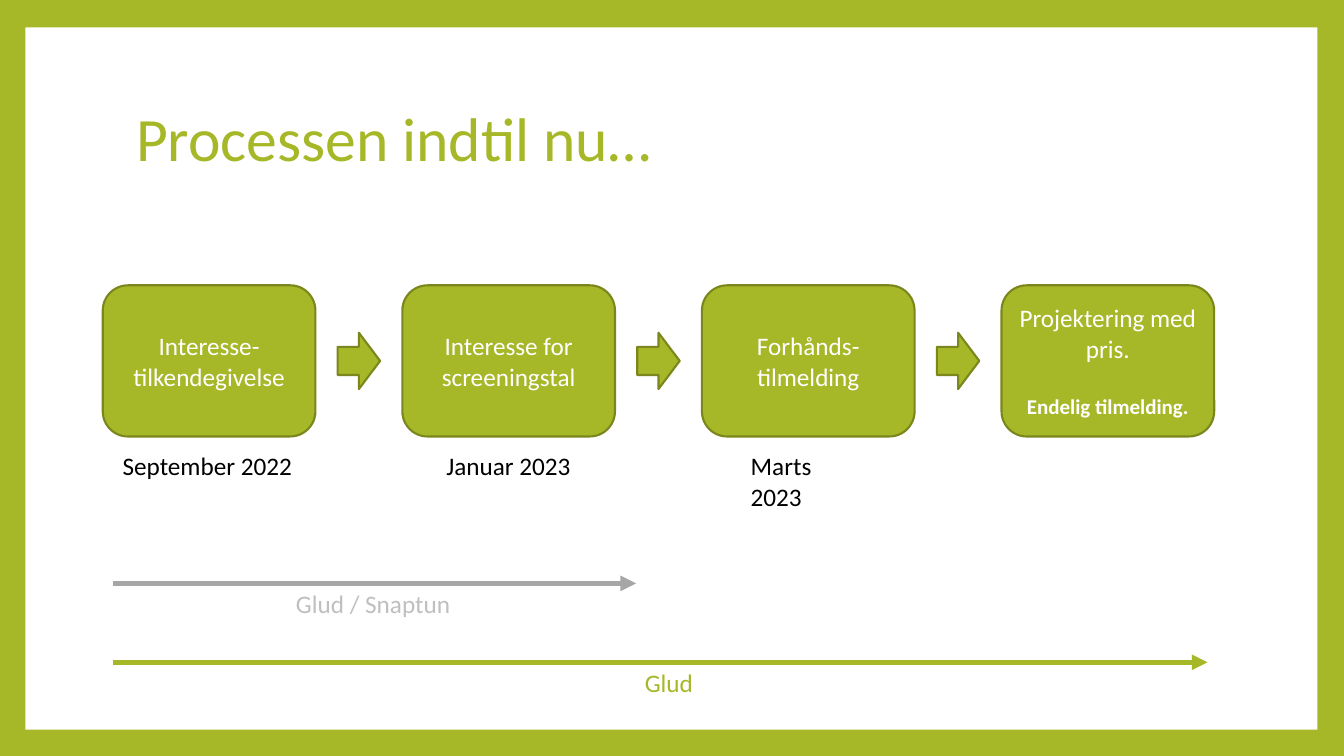
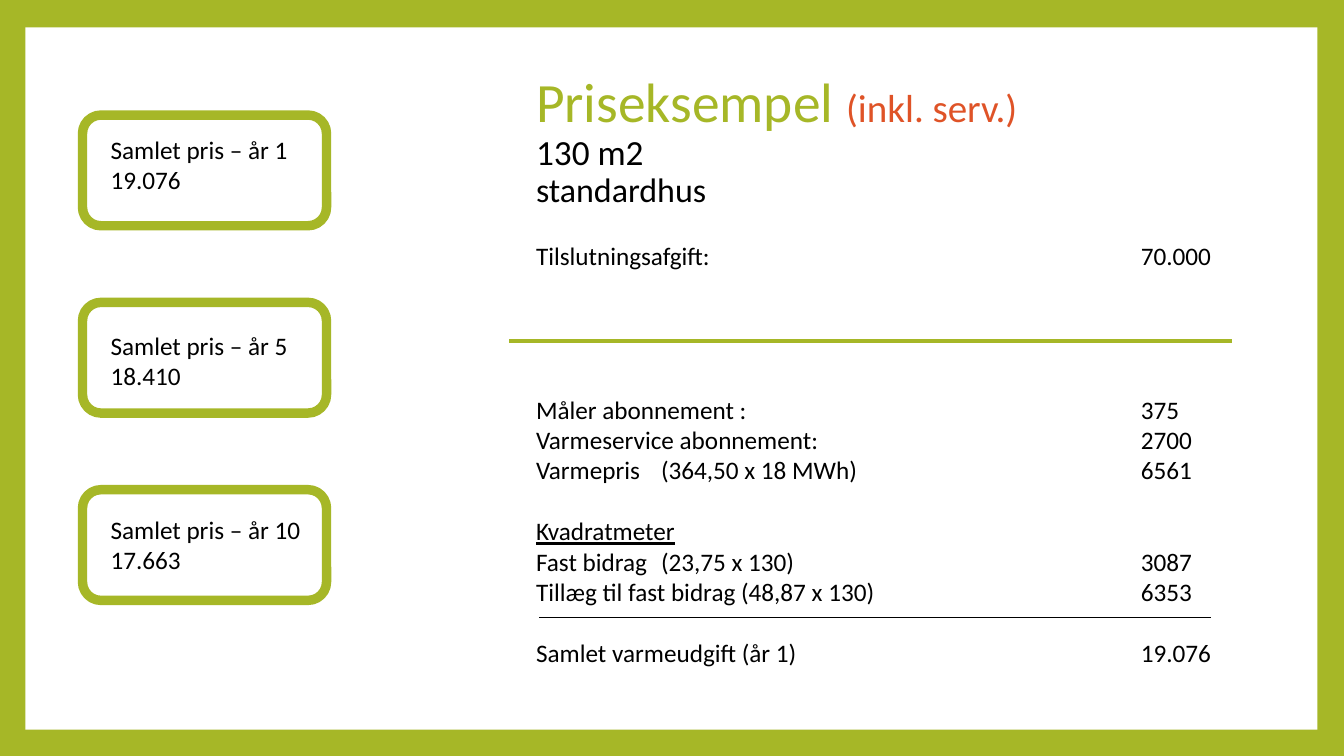
"""Build two Danish slides on the district heating process and a price example."""
from lxml import etree
from pptx import Presentation
from pptx.dml.color import RGBColor as RGB
from pptx.enum.shapes import MSO_CONNECTOR as CONN, MSO_SHAPE as SHAPE
from pptx.enum.text import MSO_ANCHOR as ANCHOR, PP_ALIGN as ALIGN
from pptx.oxml.ns import qn
from pptx.util import Cm, Pt

COLORS = {
    "green": "A6B727", "olive": "7B871D", "orange": "DF5327", "white": "FFFFFF",
    "black": "000000", "gray": "A6A6A6", "silver": "BFBFBF",
}
FONT = "Calibri"
SIZE = 18
BLANK_LINE = 22


def rgb(name):
    return RGB.from_string(COLORS[name])


def add_run(p, text, size=SIZE, color="black", bold=False, underline=False):
    r = p.add_run()
    r.text = text
    f = r.font
    f.name, f.size, f.bold, f.underline = FONT, Pt(size), bold, underline
    f.color.rgb = rgb(color)


def add_lines(p, lines, **style):
    for i, line in enumerate(lines):
        if i:
            p.add_line_break()
        add_run(p, line, **style)


def add_text(slide, x, y, w, h, anchor=ANCHOR.TOP):
    tf = slide.shapes.add_textbox(Cm(x), Cm(y), Cm(w), Cm(h)).text_frame
    tf.word_wrap = True
    tf.vertical_anchor = anchor
    return tf


def add_label(slide, x, y, w, lines, color="black"):
    tf = add_text(slide, x, y, w, 1.02)
    add_lines(tf.paragraphs[0], lines, color=color)


def add_title(slide, x, w):
    p = add_text(slide, x, 1.7, w, 3.76, ANCHOR.MIDDLE).paragraphs[0]
    p.line_spacing = 0.9
    return p


def add_box(slide, kind, x, y, w, h, fill=None, line=None, width=1.5):
    sp = slide.shapes.add_shape(kind, Cm(x), Cm(y), Cm(w), Cm(h))
    sp.shadow.inherit = False
    if fill:
        sp.fill.solid()
        sp.fill.fore_color.rgb = rgb(fill)
    else:
        sp.fill.background()
    if line:
        sp.line.color.rgb = rgb(line)
        sp.line.width = Pt(width)
    else:
        sp.line.fill.background()
    return sp


def add_rule(slide, x1, x2, y, color, width, arrow=False):
    c = slide.shapes.add_connector(CONN.STRAIGHT, Cm(x1), Cm(y), Cm(x2), Cm(y))
    c.line.color.rgb = rgb(color)
    c.line.width = Pt(width)
    if arrow:
        etree.SubElement(c.line._get_or_add_ln(), qn("a:tailEnd"), type="triangle")
    etree.SubElement(c._element.spPr, qn("a:effectLst"))


def add_step(slide, x, y, w, h, lines, note=None):
    sp = add_box(slide, SHAPE.ROUNDED_RECTANGLE, x, y, w, h, "green", "olive")
    tf = sp.text_frame
    tf.word_wrap = True
    tf.vertical_anchor = ANCHOR.MIDDLE
    p = tf.paragraphs[0]
    p.alignment = ALIGN.CENTER
    add_lines(p, lines, color="white")
    if note:
        p = tf.add_paragraph()
        p.alignment = ALIGN.CENTER
        p.space_before = Pt(BLANK_LINE)
        add_run(p, note, 15, "white", bold=True)


def add_total(slide, y, inset, lines):
    sp = add_box(slide, SHAPE.ROUNDED_RECTANGLE, 2.08, y, 6.15, 2.79,
                 line="green", width=6.75)
    tf = sp.text_frame
    tf.word_wrap = True
    tf.vertical_anchor = ANCHOR.TOP
    tf.margin_left, tf.margin_right = Cm(0.57), Cm(0)
    tf.margin_top = Cm(inset)
    p = tf.paragraphs[0]
    p.alignment = ALIGN.LEFT
    add_lines(p, lines)


def add_price_list(slide, rows):
    tf = add_text(slide, 13.26, 5.94, 18.59, 11.79)
    for i, (blanks, text, underline) in enumerate(rows):
        p = tf.add_paragraph() if i else tf.paragraphs[0]
        if blanks:
            p.space_before = Pt(blanks * BLANK_LINE)
        tabs = etree.SubElement(p._p.get_or_add_pPr(), qn("a:tabLst"))
        for pos in (3.15, 15.24):
            etree.SubElement(tabs, qn("a:tab"), pos=str(Cm(pos)), algn="l")
        add_run(p, text, underline=underline)


def add_slide(prs):
    slide = prs.slides.add_slide(prs.slide_layouts[6])
    add_box(slide, SHAPE.RECTANGLE, 0.64, 0.69, 32.56, 17.7, "white")
    return slide


def build_process(prs):
    slide = add_slide(prs)
    add_run(add_title(slide, 3.18, 27.43), "Processen indtil nu…", 44, "green")
    left, top, w, h, pitch = 2.59, 7.19, 5.36, 3.81, 7.55
    arrow_w, arrow_h = 1.07, 1.42
    steps = [
        (["Interesse-tilkendegivelse"], None),
        (["Interesse for", "screeningstal"], None),
        (["Forhånds-tilmelding"], None),
        (["Projektering med pris."], "Endelig tilmelding."),
    ]
    for i, (lines, note) in enumerate(steps):
        x = left + i * pitch
        add_step(slide, x, top, w, h, lines, note)
        if i:
            add_box(slide, SHAPE.RIGHT_ARROW, x - (pitch - w + arrow_w) / 2,
                    top + (h - arrow_h) / 2, arrow_w, arrow_h, "green", "olive")
    for x, lines in [(2.84, ["September 2022"]), (11, ["Januar 2023"]),
                     (18.67, ["Marts", "2023"])]:
        add_label(slide, x, 11.23, 5.2, lines)
    for end, y, line, text_x, text, color in [
            (16.03, 14.7, "gray", 7.21, "Glud / Snaptun", "silver"),
            (30.43, 16.69, "green", 16, "Glud", "green")]:
        add_rule(slide, 2.84, end, y, line, 3.75, arrow=True)
        add_label(slide, text_x, y, 5.2, [text], color)


def build_price(prs):
    slide = add_slide(prs)
    p = add_title(slide, 13.26, 18.59)
    add_run(p, "Priseksempel ", 39.6, "green")
    add_run(p, "(inkl. serv.)", 27.9, "orange")
    for text, size in [("130 m2", 25.2), ("standardhus", 24.3)]:
        p.add_line_break()
        add_run(p, text, size)
    add_price_list(slide, [
        (0, "Tilslutningsafgift:\t70.000", False),
        (4, "Måler abonnement :\t375", False),
        (0, "Varmeservice abonnement:\t2700", False),
        (0, "Varmepris\t(364,50 x 18 MWh)\t6561", False),
        (1, "Kvadratmeter", True),
        (0, "Fast bidrag\t(23,75 x 130)\t3087", False),
        (0, "Tillæg til fast bidrag (48,87 x 130)\t6353", False),
        (1, "Samlet varmeudgift (år 1)\t19.076", False),
    ])
    add_rule(slide, 12.83, 31.06, 8.59, "green", 2.75)
    add_rule(slide, 13.59, 30.53, 15.57, "black", 0.79)
    totals = [(1, "19.076", 0.34), (5, "18.410", 0.57), (10, "17.663", 0.48)]
    for i, (year, price, inset) in enumerate(totals):
        add_total(slide, 2.9 + i * 4.72, inset, [f"Samlet pris – år {year}", price])


def main():
    prs = Presentation()
    prs.slide_width, prs.slide_height = Cm(33.87), Cm(19.05)
    fill = prs.slide_master.background.fill
    fill.solid()
    fill.fore_color.rgb = rgb("green")
    build_process(prs)
    build_price(prs)
    prs.save("out.pptx")


if __name__ == "__main__":
    main()
